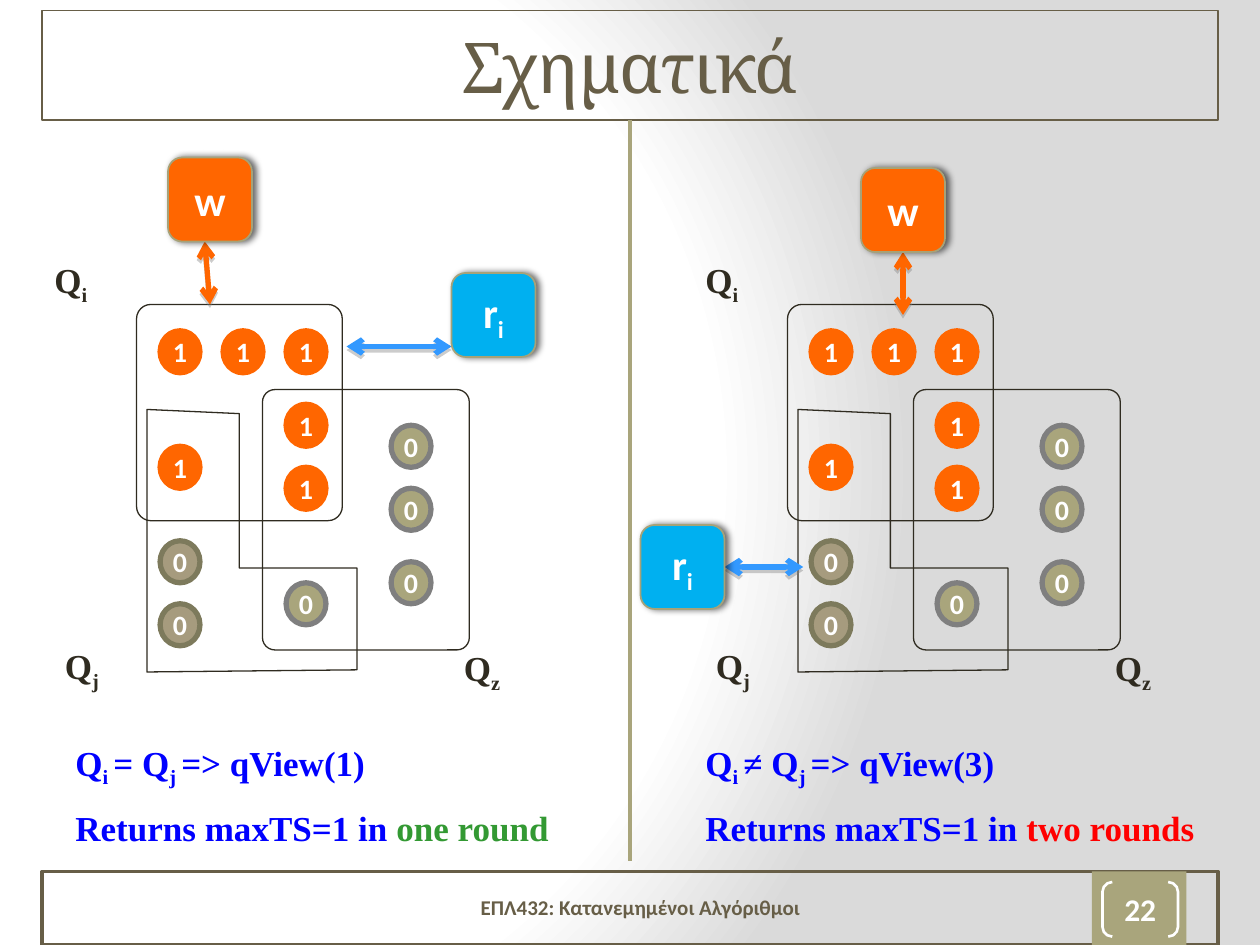
from pptx import Presentation
from pptx.dml.color import RGBColor
from pptx.enum.shapes import MSO_CONNECTOR, MSO_SHAPE
from pptx.enum.text import MSO_ANCHOR, PP_ALIGN
from pptx.oxml import parse_xml
from pptx.oxml.ns import nsdecls
from pptx.util import Inches, Pt

WHITE = RGBColor(0xFF, 0xFF, 0xFF)
INK = RGBColor(0x2F, 0x2B, 0x20)
BROWN = RGBColor(0x67, 0x5E, 0x47)
OLIVE = RGBColor(0xA9, 0xA5, 0x7C)
EDGE = RGBColor(0xA6, 0xA2, 0x78)
TAUPE = RGBColor(0xA6, 0x9B, 0x7E)
MOSS = RGBColor(0x7D, 0x7A, 0x5C)
GRAY = RGBColor(0x7F, 0x7F, 0x7F)
ORANGE = RGBColor(0xFF, 0x66, 0x00)
SKY = RGBColor(0x00, 0xB0, 0xF0)
ARROW_BLUE = RGBColor(0x33, 0x99, 0xFF)
BLUE = RGBColor(0x00, 0x00, 0xFF)
GREEN = RGBColor(0x33, 0x99, 0x33)
RED = RGBColor(0xFF, 0x00, 0x00)

COLS, ROWS = 120, 90
HALF = 62
TITLE = dict(name="Cambria", size=Pt(40))
FOOTER = dict(name="Calibri", size=Pt(12), bold=True)
NUMBER = dict(name="Calibri", size=Pt(18), bold=True)
NODE = dict(name="Calibri", size=Pt(16), bold=True)
PROCESS = dict(name="Calibri", size=Pt(24), bold=True)
SERIF = dict(name="Times New Roman", size=Pt(20), bold=True)
NO_INSET = dict(margin_left=0, margin_right=0, margin_top=0, margin_bottom=0)

WRITTEN = [(15.25, 31.5), (21.25, 31.5), (27.25, 31.5),
           (27.25, 38.5), (27.25, 44.5), (15.25, 42.5)]
UNREAD_Z = [(37.25, 40.5), (37.25, 46.5), (37.25, 53.5), (27.25, 55.5)]
UNREAD_J = [(15.25, 51.5), (15.25, 57.5)]
QUORUM_J = [(14, 39), (14, 64), (34, 63.8), (34, 54.1), (22.8, 54.1), (22.8, 39.4)]
LABELS = [("Q_i", 4, 24), ("Q_j", 5, 60.8), ("Q_z", 43, 61)]


def assign(target, values):
    for key, value in values.items():
        setattr(target, key, value)


class Board:
    def __init__(self, prs):
        self.prs = prs
        self.s = prs.slides.add_slide(prs.slide_layouts[5])
        self.shapes = self.s.shapes

    def at(self, *lengths):
        units = (self.prs.slide_width / COLS, self.prs.slide_height / ROWS)
        return [round(v * units[i % 2]) for i, v in enumerate(lengths)]

    def background(self):
        stops = "".join(
            f'<a:gs pos="{pos}"><a:srgbClr val="{color}"/></a:gs>'
            for pos, color in ((0, "FFFFFF"), (75000, "FFFFFF"), (100000, "DADADA")))
        self.s.element.cSld.insert(0, parse_xml(
            f'<p:bg {nsdecls("p", "a")}><p:bgPr><a:gradFill rotWithShape="1">'
            f'<a:gsLst>{stops}</a:gsLst><a:path path="circle">'
            '<a:fillToRect l="20000" t="50000" r="100000" b="50000"/></a:path>'
            '</a:gradFill><a:effectLst/></p:bgPr></p:bg>'))

    def effects(self, sp, color="", alpha=0, blur=0, angle=0):
        shadow = "" if not color else (
            f'<a:outerShdw blurRad="{Pt(blur)}" dist="{Pt(2)}" dir="{angle * 60000}" '
            f'algn="ctr" rotWithShape="0"><a:srgbClr val="{color}">'
            f'<a:alpha val="{alpha * 1000}"/></a:srgbClr></a:outerShdw>')
        sp.element.spPr.append(parse_xml(
            f'<a:effectLst {nsdecls("a")}>{shadow}</a:effectLst>'))

    def paint(self, sp, fill=None, line=None, width=0.75):
        for part, color in ((sp.fill, fill), (sp.line.fill, line)):
            if color is None:
                part.background()
            else:
                part.solid()
                part.fore_color.rgb = color
        if line is not None:
            sp.line.width = Pt(width)

    def add_runs(self, p, text, font, color):
        for i, piece in enumerate(text.split("_")):
            r = p.add_run()
            r.text = piece
            assign(r.font, font)
            r.font.color.rgb = color
            if i % 2:
                r._r.get_or_add_rPr().set("baseline", "-25000")

    def center(self, sp, text, font, color=WHITE, wrap=True, frame=None):
        tf = sp.text_frame
        assign(tf, dict(word_wrap=wrap, vertical_anchor=MSO_ANCHOR.MIDDLE, **(frame or {})))
        p = tf.paragraphs[0]
        p.alignment = PP_ALIGN.CENTER
        self.add_runs(p, text, font, color)
        return p

    def title(self, text, box):
        sp = self.s.shapes.title
        assign(sp, dict(zip(("left", "top", "width", "height"), self.at(*box))))
        self.paint(sp, None, BROWN, 1)
        p = self.center(sp, text, TITLE, BROWN)
        p.runs[0]._r.get_or_add_rPr().set("spc", "-100")

    def shape(self, kind, box, adj=None, **style):
        sp = self.shapes.add_shape(kind, *self.at(*box))
        if adj is not None:
            sp.adjustments[0] = adj
        self.paint(sp, **style)
        sp.shadow.inherit = False
        return sp

    def node(self, x, y, text, fill, line):
        sp = self.shape(MSO_SHAPE.OVAL, (x, y, 3.8, 4), fill=fill, line=line, width=3)
        self.center(sp, text, NODE, wrap=False)

    def process(self, x, y, text, fill):
        sp = self.shapes.add_shape(MSO_SHAPE.ROUNDED_RECTANGLE, *self.at(x, y, 8, 8))
        self.paint(sp, fill, EDGE, 1)
        self.effects(sp, "000000", 60, 4)
        self.center(sp, text, PROCESS)

    def outline(self, points):
        start, *rest = [self.at(*point) for point in points]
        builder = self.shapes.build_freeform(*start, scale=1.0)
        builder.add_line_segments(rest, close=True)
        sp = builder.convert_to_shape()
        self.paint(sp, None, INK)
        sp.shadow.inherit = False

    def line(self, ends, color, width, arrows=False):
        sp = self.shapes.add_connector(MSO_CONNECTOR.STRAIGHT, *self.at(*ends))
        sp.line.color.rgb = color
        sp.line.width = Pt(width)
        if arrows:
            for end in ("headEnd", "tailEnd"):
                sp.element.spPr.get_or_add_ln().append(
                    parse_xml(f'<a:{end} {nsdecls("a")} type="arrow"/>'))
            self.effects(sp, "808080", 40, 0, 90)
        else:
            self.effects(sp)

    def text(self, box, paragraphs):
        tf = self.shapes.add_textbox(*self.at(*box)).text_frame
        tf.word_wrap = True
        for i, parts in enumerate(paragraphs):
            p = tf.add_paragraph() if i else tf.paragraphs[0]
            p._p.get_or_add_pPr().append(parse_xml(
                f'<a:spcBef {nsdecls("a")}><a:spcPct val="50000"/></a:spcBef>'))
            for text, color in parts:
                self.add_runs(p, text, SERIF, color)

    def quorums(self, dx, read_arrow):
        self.shapes = self.s.shapes.add_group_shape().shapes
        for x, y, w, h, adj in ((13, 29, 19.6, 20.6, 0.07), (25, 37.1, 19.7, 24.8, 0.06)):
            self.shape(MSO_SHAPE.ROUNDED_RECTANGLE, (x + dx, y, w, h), adj, line=INK)
        self.outline([(x + dx, y) for x, y in QUORUM_J])
        for text, x, y in LABELS:
            self.text((x + dx, y, 7.3, 5.2), [[(text, INK)]])
        for places, text, fill, line in ((WRITTEN, "1", ORANGE, ORANGE),
                                         (UNREAD_Z, "0", OLIVE, GRAY),
                                         (UNREAD_J, "0", TAUPE, MOSS)):
            for x, y in places:
                self.node(x + dx, y, text, fill, line)
        self.line(read_arrow, ARROW_BLUE, 3, arrows=True)
        self.shapes = self.s.shapes


def main():
    prs = Presentation()
    prs.slide_width, prs.slide_height = Inches(10), Inches(7.5)
    b = Board(prs)
    b.background()
    b.shape(MSO_SHAPE.RECTANGLE, (4, 83, 112, 7), line=BROWN, width=2)
    b.shape(MSO_SHAPE.RECTANGLE, (104, 83, 9, 7), fill=OLIVE)
    b.title("Σχηματικά", (4, 1, 112, 10.4))
    footer = b.shape(MSO_SHAPE.RECTANGLE, (35, 84, 52, 4.8))
    b.center(footer, "ΕΠΛ432: Κατανεμημένοι Αλγόριθμοι", FOOTER, BROWN)
    number = b.shape(MSO_SHAPE.DOUBLE_BRACKET, (105, 84, 7.2, 5.2), 0.18,
                     line=WHITE, width=1.5)
    b.center(number, "22", NUMBER, frame=NO_INSET)
    b.line((60, 11.4, 60, 82), OLIVE, 2)

    for dx, read_arrow, write_arrow, writer, reader, left, sign, views, rounds, color in (
            (0, (33, 33, 43, 33), (20, 29, 19.5, 23), (16, 15), (43, 26),
             6, "=", 1, "one round", GREEN),
            (HALF, (69, 54, 76.5, 54), (86, 30, 86, 24), (82, 16), (61, 50),
             66, "≠", 3, "two rounds", RED)):
        b.quorums(dx, read_arrow)
        b.line(write_arrow, ORANGE, 3, arrows=True)
        b.process(*writer, "w", ORANGE)
        b.process(*reader, "r_i", SKY)
        b.text((left, 70, 50, 11.3), [
            [(f"Q_i _{sign} Q_j _=> qView({views})", BLUE)],
            [("Returns maxTS=1 in ", BLUE), (rounds, color)]])
    prs.save("out.pptx")


if __name__ == "__main__":
    main()
